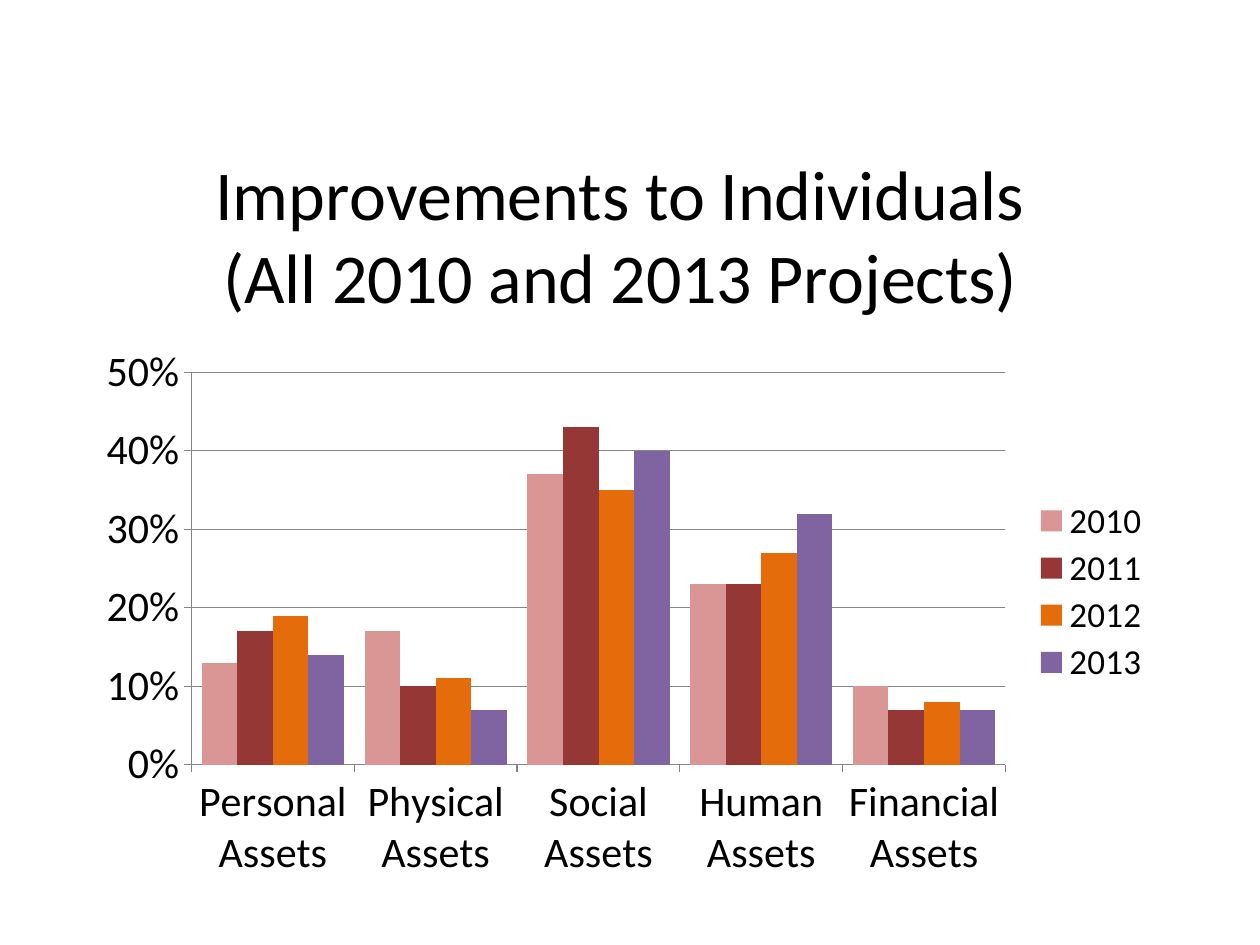
from dataclasses import dataclass

from lxml import etree
from pptx import Presentation
from pptx import util as u
from pptx.chart.data import CategoryChartData
from pptx.dml.color import RGBColor
from pptx.enum import chart as ch
from pptx.oxml.ns import qn


@dataclass(frozen=True)
class Theme:
    font: str = "Calibri"
    ink: str = "000000"
    rule: str = "868686"
    series: tuple = ("D99694", "953735", "E46C0A", "8064A2")
    base: int = 10
    title: int = 40
    axis: int = 24
    legend: int = 20


CATEGORIES = [f"{kind} Assets" for kind in
              ("Personal", "Physical", "Social", "Human", "Financial")]
IMPROVEMENTS = {
    "2010": (0.13, 0.17, 0.37, 0.23, 0.10),
    "2011": (0.17, 0.10, 0.43, 0.23, 0.07),
    "2012": (0.19, 0.11, 0.35, 0.27, 0.08),
    "2013": (0.14, 0.07, 0.40, 0.32, 0.07),
}
TITLE = "Improvements to Individuals\n(All 2010 and 2013 Projects)"


def set_attrs(obj, values):
    for name, value in values.items():
        setattr(obj, name, value)


def place(element, x, y, w, h, inner=False):
    """Give a plot area or legend a fixed place, in fractions of the chart."""
    layout = element.find(qn("c:layout"))
    if layout is None:
        layout = etree.Element(qn("c:layout"))
        if inner:
            element.insert(0, layout)
        else:
            element.find(qn("c:legendPos")).addnext(layout)
    for child in list(layout):
        layout.remove(child)
    manual = etree.SubElement(layout, qn("c:manualLayout"))
    settings = {"layoutTarget": "inner"} if inner else {}
    settings.update(xMode="edge", yMode="edge", x=x, y=y, w=w, h=h)
    for tag, value in settings.items():
        etree.SubElement(manual, qn(f"c:{tag}")).set("val", str(value))


class SlideBuilder:
    def __init__(self, slide, theme):
        self.slide, self.theme = slide, theme

    def style_font(self, font, size):
        set_attrs(font, {"name": self.theme.font, "size": u.Pt(size), "bold": False})
        font.color.rgb = RGBColor.from_string(self.theme.ink)

    def style_line(self, line):
        line.color.rgb = RGBColor.from_string(self.theme.rule)
        line.width = u.Pt(0.75)

    def column_chart(self, left, top, width, height, categories, series):
        data = CategoryChartData(number_format="0%")
        data.categories = categories
        for name, values in series.items():
            data.add_series(name, values)
        chart = self.slide.shapes.add_chart(
            ch.XL_CHART_TYPE.COLUMN_CLUSTERED, u.Inches(left), u.Inches(top),
            u.Inches(width), u.Inches(height), data).chart
        self.style_font(chart.font, self.theme.base)
        plot = chart.plots[0]
        set_attrs(plot, {"gap_width": 58, "overlap": 0, "vary_by_categories": False})
        for bars, color in zip(plot.series, self.theme.series):
            bars.format.fill.solid()
            bars.format.fill.fore_color.rgb = RGBColor.from_string(color)
        return chart

    def chart_title(self, chart, title):
        chart.has_title = True
        tf = chart.chart_title.text_frame
        tf.text = title
        for p in tf.paragraphs:
            self.style_font(p.font, self.theme.title)
            for r in p.runs:
                self.style_font(r.font, self.theme.title)

    def chart_axes(self, chart):
        for axis in (chart.category_axis, chart.value_axis):
            axis.major_tick_mark = ch.XL_TICK_MARK.OUTSIDE
            self.style_font(axis.tick_labels.font, self.theme.axis)
            self.style_line(axis.format.line)
        values = chart.value_axis
        set_attrs(values, {"minimum_scale": 0, "maximum_scale": 0.5,
                           "major_unit": 0.1, "has_major_gridlines": True})
        set_attrs(values.tick_labels, {"number_format": "0%",
                                       "number_format_is_linked": False})
        self.style_line(values.major_gridlines.format.line)

    def chart_legend(self, chart):
        chart.has_legend = True
        set_attrs(chart.legend, {"position": ch.XL_LEGEND_POSITION.RIGHT,
                                 "include_in_layout": False})
        self.style_font(chart.legend.font, self.theme.legend)


def main():
    prs = Presentation()
    set_attrs(prs, {"slide_width": u.Inches(10), "slide_height": u.Inches(7.5)})
    s = SlideBuilder(prs.slides.add_slide(prs.slide_layouts[6]), Theme())

    chart = s.column_chart(0.67, 1, 8.5, 6.11, CATEGORIES, IMPROVEMENTS)
    s.chart_title(chart, TITLE)
    s.chart_axes(chart)
    s.chart_legend(chart)
    root = chart.element
    place(root.find(f".//{qn('c:plotArea')}"), 0.1, 0.32, 0.76, 0.51, inner=True)
    place(root.find(f".//{qn('c:legend')}"), 0.88, 0.48, 0.12, 0.25)
    prs.save("out.pptx")


if __name__ == "__main__":
    main()
